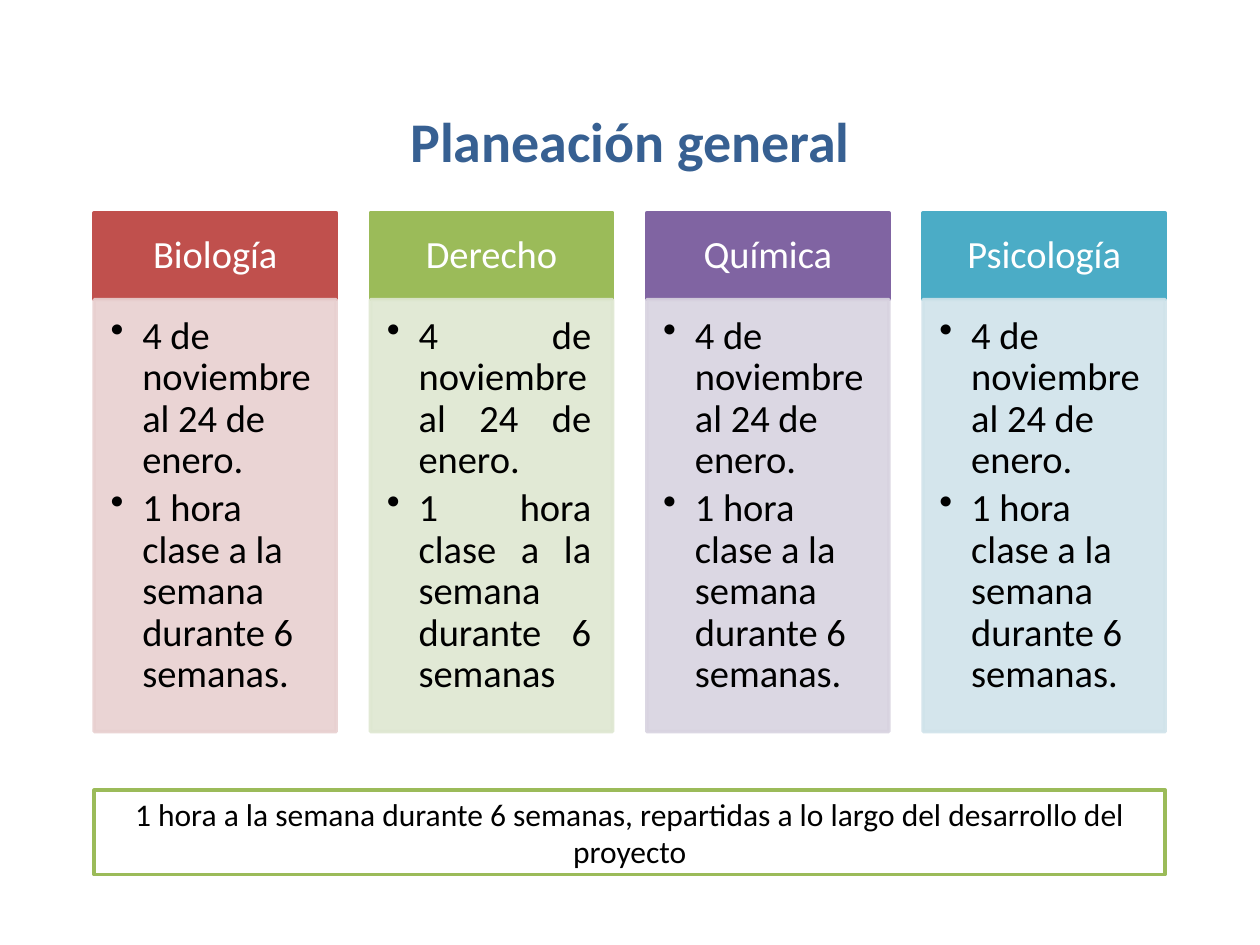
"""Build the general planning slide: four subject columns and a summary box."""
import pptx
import pptx.dml.color
import pptx.enum.shapes
import pptx.enum.text
import pptx.oxml
import pptx.oxml.ns
import pptx.util

Cm, Pt = pptx.util.Cm, pptx.util.Pt
ALIGN = pptx.enum.text.PP_ALIGN
ANCHOR = pptx.enum.text.MSO_ANCHOR

TITLE = "Planeación general"
DATES = "4 de noviembre al 24 de enero."
HOURS = "1 hora clase a la semana durante 6 semanas"
SUBJECTS = [
    ("Biología", [DATES, HOURS + "."], "C0504D", "E8D0D0", ALIGN.LEFT),
    ("Derecho", [DATES, HOURS], "9BBB59", "DEE7D1", ALIGN.JUSTIFY),
    ("Química", [DATES, HOURS + "."], "8064A2", "D8D3E0", ALIGN.LEFT),
    ("Psicología", [DATES, HOURS + "."], "4BACC6", "D0E3EA", ALIGN.LEFT),
]
SUMMARY = ("1 hora a la semana durante 6 semanas, repartidas a lo largo "
           "del desarrollo del proyecto")

LEFT, TOTAL_WIDTH, COLUMN_WIDTH = 1.9, 21.59, 4.88
HEADER_TOP, HEADER_HEIGHT, BODY_HEIGHT = 4.29, 1.75, 8.71
HEADER_INSETS = (0.43, 0.25, 0.43, 0.25)
BODY_INSETS = (0.33, 0.33, 0.43, 0.48)
PLAIN_INSETS = (0.25, 0.13, 0.25, 0.13)


def rgb(value):
    return pptx.dml.color.RGBColor.from_string(value)


def make_translucent(shape, percent):
    for color in shape._element.spPr.iter(pptx.oxml.ns.qn("a:srgbClr")):
        color.append(pptx.oxml.parse_xml(
            f'<a:alpha {pptx.oxml.ns.nsdecls("a")} val="{percent * 1000}"/>'))


def add_bullet(paragraph):
    properties = paragraph._p.get_or_add_pPr()
    properties.set("marL", str(Cm(0.64)))
    properties.set("indent", str(-Cm(0.64)))
    properties.append(pptx.oxml.parse_xml(
        f'<a:buChar {pptx.oxml.ns.nsdecls("a")} char="•"/>'))


def write(shape, lines, size, color, align=ALIGN.CENTER, anchor=ANCHOR.MIDDLE,
          insets=PLAIN_INSETS, spacing=None, after=None, bullets=False, bold=False):
    frame = shape.text_frame
    frame.text = "\n".join(lines)
    frame.word_wrap = True
    frame.auto_size = pptx.enum.text.MSO_AUTO_SIZE.NONE
    frame.vertical_anchor = anchor
    (frame.margin_left, frame.margin_top,
     frame.margin_right, frame.margin_bottom) = map(Cm, insets)
    for paragraph in frame.paragraphs:
        if bullets:
            add_bullet(paragraph)
        paragraph.alignment = align
        paragraph.line_spacing = spacing
        paragraph.space_after = after
        for run in paragraph.runs:
            run.font.name = "Calibri"
            run.font.size = Pt(size)
            run.font.bold = bold
            run.font.color.rgb = rgb(color)


def add_box(slide, left, top, width, height, fill, line):
    box = slide.shapes.add_shape(pptx.enum.shapes.MSO_SHAPE.RECTANGLE,
                                 Cm(left), Cm(top), Cm(width), Cm(height))
    box.shadow.inherit = False
    box.fill.solid()
    box.fill.fore_color.rgb = rgb(fill)
    box.line.color.rgb = rgb(line)
    box.line.width = Pt(2)
    return box


def main():
    deck = pptx.Presentation()
    deck.slide_width, deck.slide_height = Cm(25.4), Cm(19.05)
    slide = deck.slides.add_slide(deck.slide_layouts.get_by_name("Title Only"))

    title = slide.shapes.title
    title.left, title.top, title.width, title.height = map(Cm, (2.31, 1.93, 20.8, 1.8))
    write(title, [TITLE], 32, "376092", bold=True)

    pitch = (TOTAL_WIDTH - COLUMN_WIDTH) / (len(SUBJECTS) - 1)
    for index, (subject, plan, strong, pale, align) in enumerate(SUBJECTS):
        left = LEFT + index * pitch
        header = add_box(slide, left, HEADER_TOP, COLUMN_WIDTH, HEADER_HEIGHT,
                         strong, strong)
        write(header, [subject], 22, "FFFFFF", insets=HEADER_INSETS, spacing=0.9)
        body = add_box(slide, left, HEADER_TOP + HEADER_HEIGHT, COLUMN_WIDTH,
                       BODY_HEIGHT, pale, pale)
        make_translucent(body, 90)
        write(body, plan, 22, "000000", align, ANCHOR.TOP, BODY_INSETS,
              spacing=0.9, after=Pt(3.5), bullets=True)

    summary = add_box(slide, LEFT, 15.93, TOTAL_WIDTH, 1.7, "FFFFFF", "9BBB59")
    write(summary, [SUMMARY], 18, "000000")
    deck.save("out.pptx")


if __name__ == "__main__":
    main()
